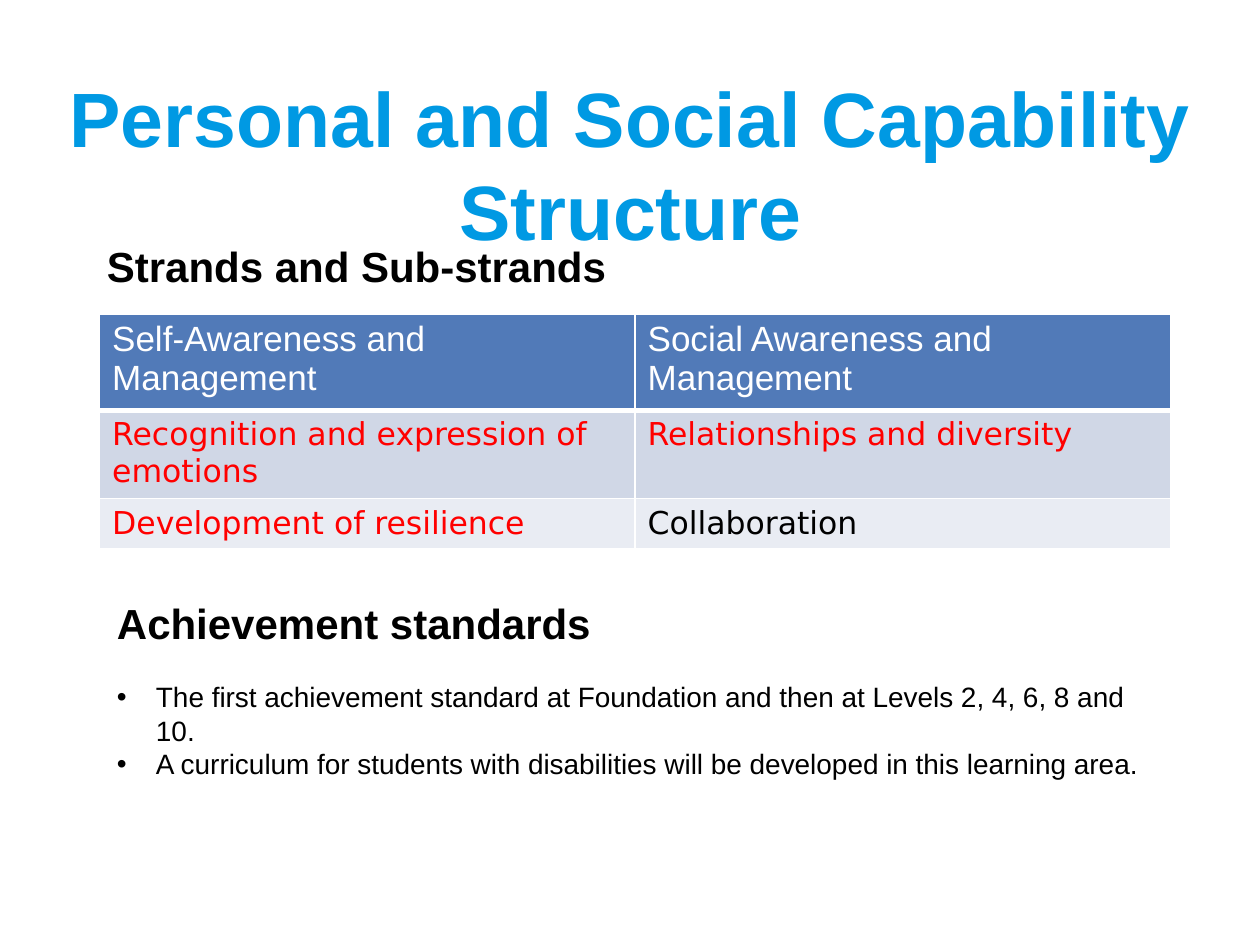
from lxml.etree import SubElement
from pptx import Presentation
from pptx.dml.color import RGBColor
from pptx.enum.text import MSO_ANCHOR as Anchor, MSO_AUTO_SIZE as AutoSize, PP_ALIGN as Align
from pptx.oxml.ns import qn
from pptx.util import Inches, Pt

WIDTH, HEIGHT = 10, 7.5
HEADER, BAND_DARK, BAND_LIGHT = "517AB8", "D0D7E6", "E9ECF3"
BLUE, RED, BLACK, WHITE = "0099E3", "FF0000", "000000", "FFFFFF"

STRANDS = [
    [("Self-Awareness and Management", WHITE), ("Social Awareness and Management", WHITE)],
    [("Recognition and expression of emotions", RED), ("Relationships and diversity", RED)],
    [("Development of resilience", RED), ("Collaboration", BLACK)],
]
STANDARDS = [
    "The first achievement standard at Foundation and then at Levels 2, 4, 6, 8 and 10.",
    "A curriculum for students with disabilities will be developed in this learning area.",
]


def color(value):
    """Turn a hex string into a colour."""
    return RGBColor.from_string(value)


def place(shape, box):
    """Move a shape to a box of left, top, width and height in inches."""
    shape.left, shape.top, shape.width, shape.height = map(Inches, box)


def write(paragraph, text, size=16, font="Arial", fill=BLACK, bold=False,
          align=Align.LEFT, after=0, bullet=False):
    """Fill a paragraph with formatted text."""
    if bullet:
        properties = paragraph._p.get_or_add_pPr()
        properties.set("marL", str(Inches(0.31)))
        properties.set("indent", str(-Inches(0.31)))
        SubElement(properties, qn("a:buFont"), typeface="Arial")
        SubElement(properties, qn("a:buChar"), char="•")
    paragraph.alignment = align
    paragraph.space_before, paragraph.space_after = Pt(0), Pt(after)
    run = paragraph.add_run()
    run.text = text
    run.font.size, run.font.name, run.font.bold = Pt(size), font, bold
    run.font.color.rgb = color(fill)


def add_text_frame(slide, box):
    """Add a wrapping text box and return its frame."""
    frame = slide.shapes.add_textbox(*map(Inches, box)).text_frame
    frame.word_wrap = True
    return frame


def add_title(slide, box):
    """Place and fill the title placeholder."""
    title = slide.shapes.title
    place(title, box)
    frame = title.text_frame
    frame.auto_size, frame.vertical_anchor = AutoSize.NONE, Anchor.MIDDLE
    write(frame.paragraphs[0], "Personal and Social Capability Structure",
          size=44, fill=BLUE, bold=True, align=Align.CENTER)


def set_borders(cell, bottom):
    """Draw white cell borders with the given bottom width in points."""
    properties = cell._tc.get_or_add_tcPr()
    for index, (side, width) in enumerate([("L", 1), ("R", 1), ("T", 1), ("B", bottom)]):
        line = properties.makeelement(qn(f"a:ln{side}"), {"w": str(Pt(width))})
        SubElement(SubElement(line, qn("a:solidFill")), qn("a:srgbClr"), val=WHITE)
        properties.insert(index, line)


def add_strands(slide, box):
    """Add the table of strands and sub-strands."""
    rows, columns = len(STRANDS), len(STRANDS[0])
    table = slide.shapes.add_table(rows, columns, *map(Inches, box)).table
    shares, fills = (0.395, 0.385, 0.22), (HEADER, BAND_DARK, BAND_LIGHT)
    for row, (entries, share, fill) in enumerate(zip(STRANDS, shares, fills)):
        table.rows[row].height = Inches(box[3] * share)
        style = dict(size=18, font="DejaVu Sans") if row else dict(size=20)
        for column, (text, text_color) in enumerate(entries):
            cell = table.cell(row, column)
            cell.fill.solid()
            cell.fill.fore_color.rgb = color(fill)
            set_borders(cell, bottom=1 if row else 3)
            write(cell.text_frame.paragraphs[0], text, fill=text_color, **style)


def add_standards(slide, box):
    """Add the achievement standards heading and its bullets."""
    frame = add_text_frame(slide, box)
    write(frame.paragraphs[0], "Achievement standards", size=24, bold=True, after=18.4)
    for text in STANDARDS:
        write(frame.add_paragraph(), text, bullet=True)


def main():
    """Build and save the slide."""
    presentation = Presentation()
    presentation.slide_width, presentation.slide_height = Inches(WIDTH), Inches(HEIGHT)
    slide = presentation.slides.add_slide(presentation.slide_layouts[5])
    add_title(slide, (0.28, 0.67, 9.45, 1.25))
    heading = add_text_frame(slide, (0.75, 1.86, 0.85 * WIDTH, 0.56))
    write(heading.paragraphs[0], "Strands and Sub-strands", size=24, bold=True)
    add_strands(slide, (0.79, 2.49, 0.85 * WIDTH, 1.78))
    add_standards(slide, (0.83, 4.69, 8.43, 1.58))
    presentation.save("out.pptx")


if __name__ == "__main__":
    main()
